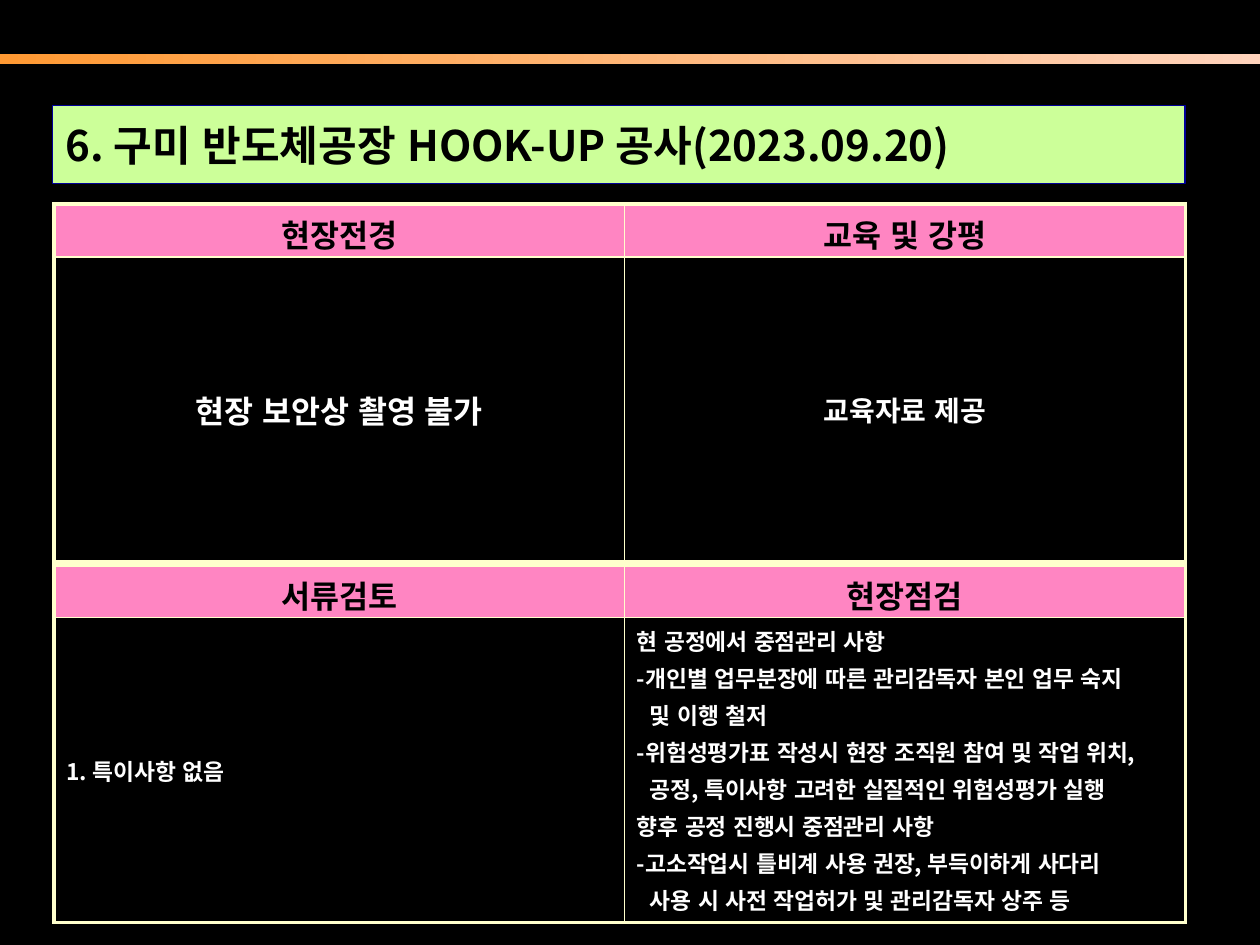
from lxml import etree
from pptx import Presentation
from pptx import util as u
from pptx.dml.color import RGBColor
from pptx.enum import lang, shapes, text
from pptx.oxml.ns import qn

FONT = "Noto Sans CJK KR"


def rgb(c):
    return RGBColor.from_string(c)


def write(tf, lines, size=18, color="FFFFFF", align=text.PP_ALIGN.CENTER, before=0, indented=()):
    for i, line in enumerate(lines):
        p = tf.paragraphs[0] if i == 0 else tf.add_paragraph()
        p.alignment = align
        p.space_before = u.Pt(before if i else 0)
        if i in indented:
            p._p.get_or_add_pPr().set("marL", str(u.Pt(7.4)))
        r = p.add_run()
        r.text = line
        r.font.size = u.Pt(size)
        r.font.bold = True
        r.font.color.rgb = rgb(color)
        r.font.language_id = lang.MSO_LANGUAGE_ID.KOREAN
        r.font.name = FONT
        etree.SubElement(r._r.get_or_add_rPr(), qn("a:ea"), typeface=FONT)


prs = Presentation()
prs.slide_width, prs.slide_height = u.Pt(720), u.Pt(540)
s = prs.slides.add_slide(prs.slide_layouts[5])
s.background.fill.solid()
s.background.fill.fore_color.rgb = rgb("000000")

bar = s.shapes.add_shape(shapes.MSO_SHAPE.RECTANGLE, u.Pt(0), u.Pt(31), u.Pt(720), u.Pt(5.7))
bar.shadow.inherit = False
bar.line.fill.background()
bar.fill.gradient()
bar.fill.gradient_angle = 0
for stop, position, color in zip(bar.fill.gradient_stops, (0, 1), ("FF9933", "FFD3BC")):
    stop.position = position
    stop.color.rgb = rgb(color)

title = s.shapes.title
title.left, title.top, title.width, title.height = u.Pt(30.2), u.Pt(60.4), u.Pt(647), u.Pt(44.4)
title.fill.solid()
title.fill.fore_color.rgb = rgb("CCFF99")
title.line.color.rgb = rgb("000099")
title.line.width = u.Pt(0.75)
tf = title.text_frame
tf.auto_size = text.MSO_AUTO_SIZE.NONE
tf.word_wrap = True
tf.vertical_anchor = text.MSO_ANCHOR.MIDDLE
tf.margin_left = tf.margin_right = u.Pt(7.2)
tf.margin_top = tf.margin_bottom = 0
write(tf, ["6. 구미 반도체공장 HOOK-UP 공사(2023.09.20)"], size=24, color="000000", align=text.PP_ALIGN.LEFT)

checks = [
    "현 공정에서 중점관리 사항",
    "-개인별 업무분장에 따른 관리감독자 본인 업무 숙지",
    "및 이행 철저",
    "-위험성평가표 작성시 현장 조직원 참여 및 작업 위치,",
    "공정, 특이사항 고려한 실질적인 위험성평가 실행",
    "향후 공정 진행시 중점관리 사항",
    "-고소작업시 틀비계 사용 권장, 부득이하게 사다리",
    "사용 시 사전 작업허가 및 관리감독자 상주 등",
]
note = dict(size=13, align=text.PP_ALIGN.LEFT, before=2.5)
tables = [
    (116.6, ["현장전경", "교육 및 강평"],
     [(["현장 보안상 촬영 불가"], {}), (["교육자료 제공"], dict(size=16))]),
    (322.8, ["서류검토", "현장점검"],
     [(["1. 특이사항 없음"], note), (checks, dict(note, indented=(2, 4, 7)))]),
]

for top, heads, bodies in tables:
    frame = s.shapes.add_table(2, 2, u.Pt(30.8), u.Pt(top), u.Pt(646.5), u.Pt(204.4))
    tbl = frame.table
    for col, width in zip(tbl.columns, (326, 320.5)):
        col.width = u.Pt(width)
    for row, height in zip(tbl.rows, (30.2, 174.2)):
        row.height = u.Pt(height)
    rows = [[([head], dict(color="000000")) for head in heads], bodies]
    for i, row in enumerate(rows):
        for j, (lines, fmt) in enumerate(row):
            cell = tbl.cell(i, j)
            cell.vertical_anchor = text.MSO_ANCHOR.MIDDLE
            cell.margin_left = cell.margin_right = u.Pt(7.2)
            cell.margin_top = u.Pt(3 if i else 3.6)
            cell.margin_bottom = u.Pt(3 if i else 0)
            write(cell.text_frame, lines, **fmt)
            tcPr = cell._tc.get_or_add_tcPr()
            for side, outer in (("L", j == 0), ("R", j == 1), ("T", i == 0), ("B", i == 1)):
                ln = etree.SubElement(tcPr, qn("a:ln" + side), w=str(u.Pt(2.25 if outer else 1)))
                fill = etree.SubElement(ln, qn("a:solidFill"))
                etree.SubElement(fill, qn("a:srgbClr"), val="FFFFCC")
            cell.fill.solid()
            cell.fill.fore_color.rgb = rgb("000000" if i else "FF85C2")

prs.save("out.pptx")
